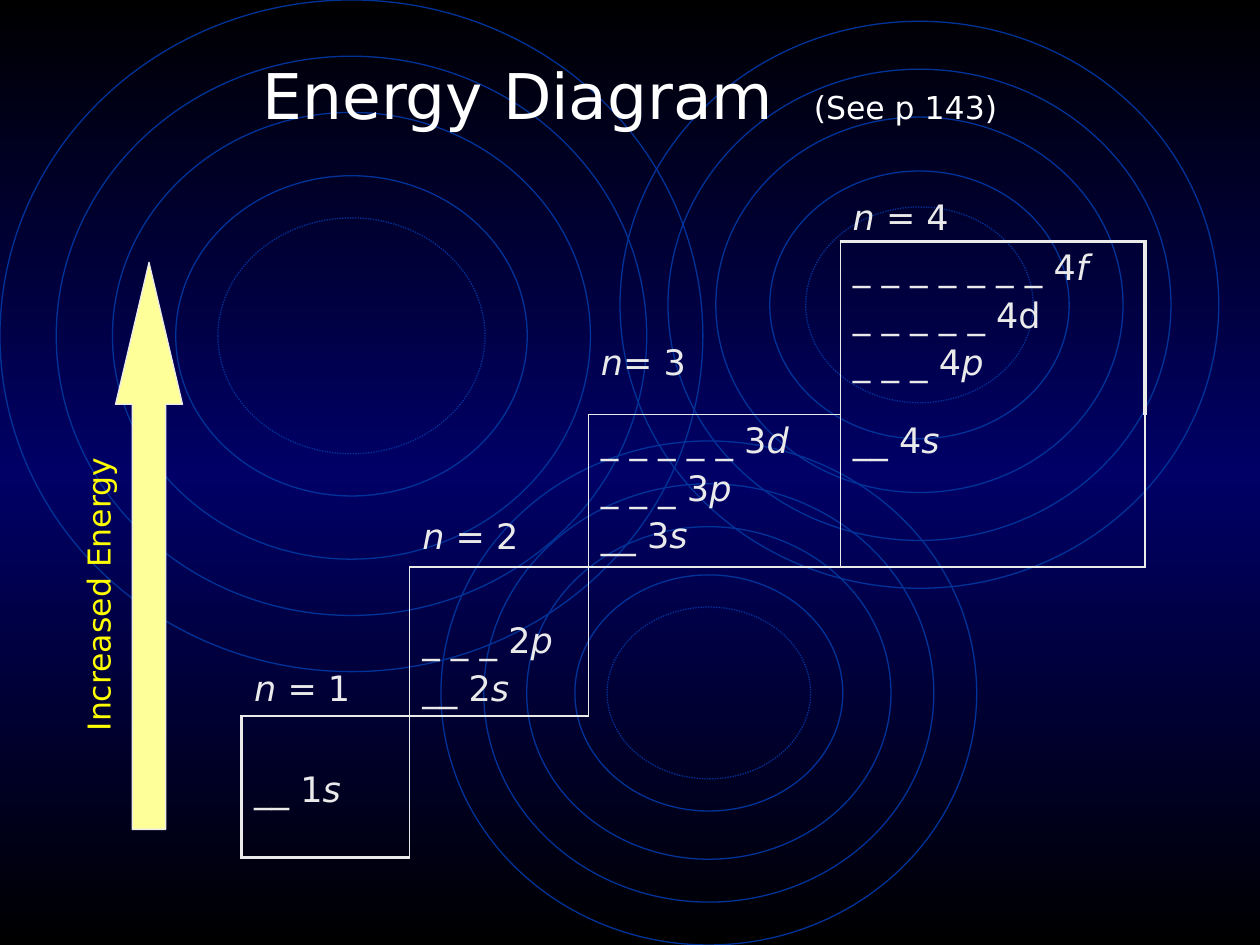
from lxml.etree import SubElement
from pptx import Presentation
from pptx.dml.color import RGBColor
from pptx.enum.dml import MSO_LINE_DASH_STYLE as Dash
from pptx.enum.shapes import MSO_SHAPE as Shape
from pptx.enum.text import MSO_ANCHOR as Anchor, PP_ALIGN as Align
from pptx.oxml.ns import qn
from pptx.util import Cm, Pt

FONT = "DejaVu Sans"
WHITE = RGBColor(0xFF, 0xFF, 0xFF)
LIGHT = RGBColor(0xEA, 0xEA, 0xEA)
YELLOW = RGBColor(0xFF, 0xFF, 0x00)
PALE_YELLOW = RGBColor(0xFF, 0xFF, 0x99)
RING_BLUE = RGBColor(0x00, 0x33, 0x99)
BLACK = RGBColor(0x00, 0x00, 0x00)
NAVY = RGBColor(0x00, 0x00, 0x66)

BACKGROUND_STOPS = [(0, BLACK), (50, NAVY), (100, BLACK)]

# Outermost ring of each set: left, top, width, height in cm
RING_SETS = [(0, 0, 14.17, 13.54), (8.89, 8.89, 10.8, 10.16), (12.5, 0.43, 12.07, 11.43)]
# Inset of each ring on every side, as a share of the set's width
RING_INSETS = [0, 0.08, 0.16, 0.25, 0.31]

COLUMNS = [3.39, 3.6, 5.08, 6.14]
ROWS = [3.49, 3.07, 2.86, 2.86]
# (row, column): (empty lines above, lines); text between asterisks is italic
LEVELS = {
    (0, 2): (2, ["*n*= 3"]),
    (0, 3): (0, ["_ _ _ _ _ _ _ 4*f*", "_ _ _ _ _ 4d", "_ _ _ 4*p*"]),
    (1, 1): (2, ["*n* = 2"]),
    (1, 2): (0, ["_ _ _ _ _ 3*d*", "_ _ _ 3*p*", "__ 3*s*"]),
    (1, 3): (0, ["__ 4*s*"]),
    (2, 0): (2, ["*n* = 1"]),
    (2, 1): (1, ["_ _ _ 2*p*", "__ 2*s*"]),
    (3, 0): (1, ["__ 1*s*"]),
}
# Shell that each cell belongs to; a line runs wherever two shells meet
SHELLS = {(3, 0): 1, (2, 1): 2, (1, 2): 3, (0, 3): 4, (1, 3): 4}
CORNERS = [(3, 0), (0, 3)]
SIDES = {"L": (0, -1), "R": (0, 1), "T": (-1, 0), "B": (1, 0)}
LINE_PITCH = 27.3
SPACE_BEFORE = 4
CELL_MARGIN = 3.6


def write(paragraph, text, size, color):
    """Fill a paragraph, with the text between asterisks in italics."""
    for index, part in enumerate(text.split("*")):
        if part:
            run = paragraph.add_run()
            run.text = part
            run.font.name = FONT
            run.font.size = Pt(size)
            run.font.color.rgb = color
            run.font.italic = index % 2 == 1


def add_label(slide, box, text, size, color, rotation=0):
    label = slide.shapes.add_textbox(*map(Cm, box))
    label.rotation = rotation
    label.text_frame.word_wrap = False
    write(label.text_frame.paragraphs[0], text, size, color)


def set_background(slide):
    fill = slide.background.fill
    fill.gradient()
    fill.gradient_angle = 90
    stops = slide.element.find(".//" + qn("a:gsLst"))
    stops.clear()
    for position, color in BACKGROUND_STOPS:
        stop = SubElement(stops, qn("a:gs"), pos=str(position * 1000))
        SubElement(stop, qn("a:srgbClr"), val=str(color))


def add_rings(slide, left, top, width, height):
    group = slide.shapes.add_group_shape()
    for share in RING_INSETS:
        inset = share * width
        ring = group.shapes.add_shape(
            Shape.OVAL, Cm(left + inset), Cm(top + inset),
            Cm(width - 2 * inset), Cm(height - 2 * inset))
        ring.shadow.inherit = False
        ring.fill.background()
        ring.line.color.rgb = RING_BLUE
        ring.line.width = Pt(0.75)
    ring.line.dash_style = Dash.ROUND_DOT


def set_borders(cell, place):
    row, column = place
    properties = cell._tc.get_or_add_tcPr()
    for side, (down, across) in SIDES.items():
        neighbour = (row + down, column + across)
        inside = 0 <= neighbour[0] < len(ROWS) and 0 <= neighbour[1] < len(COLUMNS)
        width = 2.25 if place in CORNERS and not inside else 1
        line = SubElement(properties, qn("a:ln" + side), w=str(Pt(width)))
        if SHELLS.get(place) == SHELLS.get(neighbour):
            SubElement(line, qn("a:noFill"))
        else:
            fill = SubElement(line, qn("a:solidFill"))
            SubElement(fill, qn("a:srgbClr"), val=str(LIGHT))


def add_levels(slide):
    table = slide.shapes.add_table(
        len(ROWS), len(COLUMNS), Cm(4.87), Cm(4.87), Cm(sum(COLUMNS)), Cm(sum(ROWS))).table
    table.first_row = table.horz_banding = False
    for column, width in zip(table.columns, COLUMNS):
        column.width = Cm(width)
    for row_index, height in enumerate(ROWS):
        table.rows[row_index].height = Cm(height)
        for column_index in range(len(COLUMNS)):
            place = (row_index, column_index)
            cell = table.cell(*place)
            set_borders(cell, place)
            cell.fill.background()
            empty_lines, lines = LEVELS.get(place, (0, []))
            cell.margin_top = Pt(CELL_MARGIN + empty_lines * LINE_PITCH)
            frame = cell.text_frame
            for index, line in enumerate(lines):
                paragraph = frame.add_paragraph() if index else frame.paragraphs[0]
                if index:
                    paragraph.space_before = Pt(SPACE_BEFORE)
                write(paragraph, line, 20, LIGHT)


def add_title(slide):
    title = slide.shapes.title
    slide.shapes.element.append(title.element)  # in front of the rings
    title.left, title.top, title.width, title.height = map(Cm, (1.9, 1.06, 21.6, 1.7))
    title.text_frame.vertical_anchor = Anchor.MIDDLE
    paragraph = title.text_frame.paragraphs[0]
    paragraph.alignment = Align.CENTER
    write(paragraph, "Energy Diagram  ", 36, WHITE)
    write(paragraph, "(See p 143)", 18, WHITE)


def add_energy_arrow(slide):
    arrow = slide.shapes.add_shape(Shape.UP_ARROW, Cm(2.33), Cm(5.29), Cm(1.35), Cm(11.43))
    arrow.adjustments[0] = 0.5
    arrow.adjustments[1] = 2.12
    arrow.shadow.inherit = False
    arrow.fill.solid()
    arrow.fill.fore_color.rgb = PALE_YELLOW
    arrow.line.color.rgb = LIGHT
    arrow.line.width = Pt(0.75)


def main():
    presentation = Presentation()
    presentation.slide_width = Cm(25.4)
    presentation.slide_height = Cm(19.05)
    slide = presentation.slides.add_slide(presentation.slide_layouts[5])
    set_background(slide)
    for ring_set in RING_SETS:
        add_rings(slide, *ring_set)
    add_title(slide)
    add_levels(slide)
    add_label(slide, (16.94, 3.81, 2.49, 1.1), "*n* = 4", 20, LIGHT)
    add_energy_arrow(slide)
    add_label(slide, (-1.07, 11.43, 6.1, 1.02), "Increased Energy", 18, YELLOW, 270)
    presentation.save("out.pptx")


if __name__ == "__main__":
    main()
